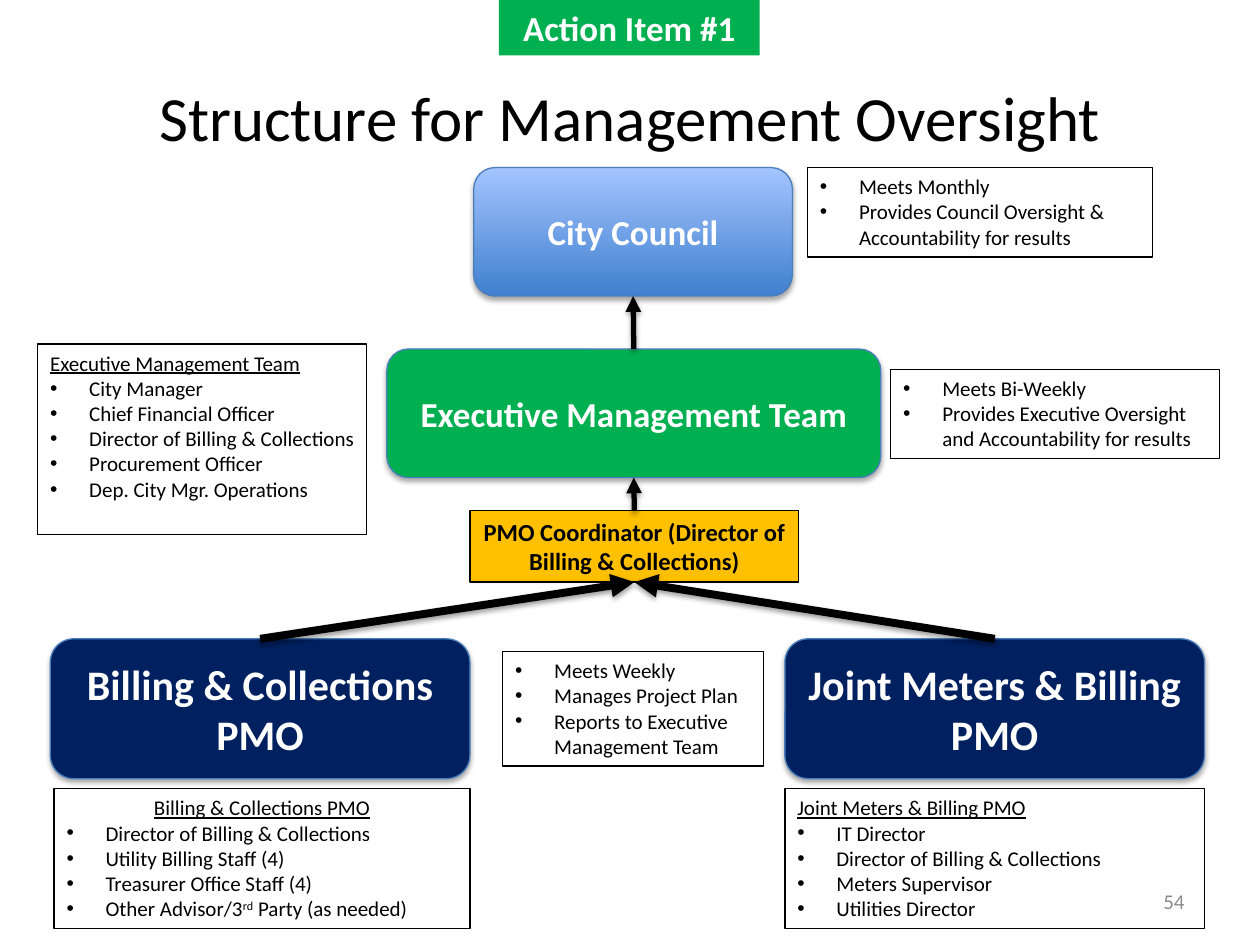
import pptx
import pptx.util
import pptx.dml.color
import pptx.enum.shapes
import pptx.enum.text
import pptx.oxml
import pptx.oxml.ns
from lxml import etree

Inches = pptx.util.Inches
Pt = pptx.util.Pt
SHAPE = pptx.enum.shapes.MSO_SHAPE
ALIGN = pptx.enum.text.PP_ALIGN
ANCHOR = pptx.enum.text.MSO_ANCHOR
qn = pptx.oxml.ns.qn
FONT = "Calibri"
TOP, BOTTOM = 0, 2
GREEN, NAVY, AMBER = "00B050", "002060", "FFC000"


def rgb(value):
    return pptx.dml.color.RGBColor.from_string(value)


def inches(box):
    return [Inches(length) for length in box]


def style(paragraph, size, color="000000", bold=False, align=None):
    paragraph.alignment = align
    for run in paragraph.runs:
        run.font.name = FONT
        run.font.size = Pt(size)
        run.font.bold = bold
        run.font.color.rgb = rgb(color)


def add_shadow(effects, alpha, distance):
    outer = etree.SubElement(
        effects, qn("a:outerShdw"), blurRad=str(Pt(3.1)), dist=str(Pt(distance)),
        dir="5400000", rotWithShape="0")
    black = etree.SubElement(outer, qn("a:srgbClr"), val="000000")
    etree.SubElement(black, qn("a:alpha"), val=str(alpha * 1000))


def add_block(slide, box, text, size, fill, line=None, color="FFFFFF", rounded=False):
    """Filled box with a centred bold label; rounded ones cast a shadow."""
    kind = SHAPE.ROUNDED_RECTANGLE if rounded else SHAPE.RECTANGLE
    block = slide.shapes.add_shape(kind, *inches(box))
    if isinstance(fill, str):
        block.fill.solid()
        block.fill.fore_color.rgb = rgb(fill)
    else:
        block.fill.gradient()
        block.fill.gradient_angle = 90
        for stop, stop_color in zip(block.fill.gradient_stops, fill):
            stop.color.rgb = rgb(stop_color)
    if line:
        block.line.color.rgb = rgb(line)
        block.line.width = Pt(0.75)
    else:
        block.line.fill.background()
    block.shadow.inherit = False
    if rounded:
        add_shadow(block._element.spPr.find(qn("a:effectLst")), 35, 1.8)
    frame = block.text_frame
    frame.word_wrap = True
    frame.vertical_anchor = ANCHOR.MIDDLE
    frame.text = text
    style(frame.paragraphs[0], size, color, True, ALIGN.CENTER)
    return block


def add_role(slide, box, text, size, fill):
    return add_block(slide, box, text, size, fill, line="4B7EBC", rounded=True)


def add_bullet(paragraph):
    properties = paragraph._p.get_or_add_pPr()
    properties.set("marL", str(Inches(0.31)))
    properties.set("indent", str(Inches(-0.31)))
    etree.SubElement(properties, qn("a:buFont"), typeface="Arial")
    etree.SubElement(properties, qn("a:buChar"), char="•")


def add_note(slide, box, items, heading=None, heading_align=None):
    """Outlined list with an optional underlined heading; returns its text frame."""
    note = slide.shapes.add_textbox(*inches(box))
    note.line.color.rgb = rgb("000000")
    note.line.width = Pt(0.75)
    frame = note.text_frame
    frame.word_wrap = True
    frame.text = "\n".join(([heading] if heading else []) + items)
    for index, paragraph in enumerate(frame.paragraphs):
        is_heading = bool(heading) and index == 0
        if not is_heading:
            add_bullet(paragraph)
        style(paragraph, 12, align=heading_align if is_heading else None)
        if is_heading:
            paragraph.runs[0].font.underline = True
    return frame


def add_arrow(slide, lower, upper, width):
    """Arrow from the top of the lower box to the bottom of the upper one."""
    arrow = slide.shapes.add_connector(
        pptx.enum.shapes.MSO_CONNECTOR.STRAIGHT, 0, 0, 0, 0)
    arrow.begin_connect(lower, TOP)
    arrow.end_connect(upper, BOTTOM)
    arrow.line.color.rgb = rgb("000000")
    arrow.line.width = Pt(width)
    etree.SubElement(arrow.line._get_or_add_ln(), qn("a:tailEnd"), type="triangle")
    add_shadow(etree.SubElement(arrow._element.spPr, qn("a:effectLst")), 38, 1.6)


def add_header(slide, left, top, width):
    add_block(slide, (left + 3.46, top, 2.07, 0.44), "Action Item #1", 20, GREEN)
    title = slide.shapes.title
    title.left, title.top, title.width, title.height = inches(
        (left, top + 0.3, width, 1.25))
    title.text_frame.text = "Structure for Management Oversight"
    title.text_frame.vertical_anchor = ANCHOR.MIDDLE
    style(title.text_frame.paragraphs[0], 36, align=ALIGN.CENTER)


def add_council(slide, left, top):
    add_note(slide, (left + 2.65, top, 2.74, 0.71), [
        "Meets Monthly", "Provides Council Oversight & Accountability for results"])
    return add_role(slide, (left, top, 2.53, 1.02), "City Council", 20,
                    ("3F80CE", "A4C4FF"))


def add_executive(slide, left, top):
    add_note(slide, (left, top, 2.61, 1.51), [
        "City Manager", "Chief Financial Officer",
        "Director of Billing & Collections", "Procurement Officer",
        "Dep. City Mgr. Operations"], "Executive Management Team")
    add_note(slide, (left + 6.77, top + 0.2, 2.61, 0.71), [
        "Meets Bi-Weekly",
        "Provides Executive Oversight and Accountability for results"])
    team = add_role(slide, (left + 2.77, top + 0.04, 3.92, 1.02),
                    "Executive Management Team", 20, GREEN)
    coordinator = add_block(
        slide, (left + 3.43, top + 1.32, 2.61, 0.57),
        "PMO Coordinator (Director of Billing & Collections)", 14, AMBER,
        line="000000", color="000000")
    return team, coordinator


def add_pmo(slide, left, top, name, members, inset=0, heading_align=None):
    office = add_role(slide, (left, top, 3.33, 1.11), name, 24, NAVY)
    roster = add_note(slide, (left + inset, top + 1.19, 3.33 - inset, 1.11),
                      members, name, heading_align)
    return office, roster


def add_pmos(slide, left, top):
    billing, roster = add_pmo(
        slide, left, top, "Billing & Collections PMO",
        ["Director of Billing & Collections", "Utility Billing Staff (4)",
         "Treasurer Office Staff (4)", "Other Advisor/3"], 0.03, ALIGN.CENTER)
    # Ordinal with a raised suffix
    advisor = roster.paragraphs[-1]
    for part in ("rd", " Party (as needed)"):
        advisor.add_run().text = part
    style(advisor, 12)
    advisor.runs[1].font._element.set("baseline", "30000")

    add_note(slide, (left + 3.59, top + 0.1, 2.07, 0.91), [
        "Meets Weekly", "Manages Project Plan",
        "Reports to Executive Management Team"])
    meters, _ = add_pmo(
        slide, left + 5.83, top, "Joint Meters & Billing PMO",
        ["IT Director", "Director of Billing & Collections",
         "Meters Supervisor", "Utilities Director"])
    return billing, meters


def add_page_number(slide, box):
    frame = slide.shapes.add_textbox(*inches(box)).text_frame
    frame.word_wrap = True
    frame.vertical_anchor = ANCHOR.MIDDLE
    frame.text = "54"
    style(frame.paragraphs[0], 12, "8C8C8C", align=ALIGN.RIGHT)


def main():
    deck = pptx.Presentation()
    deck.slide_width, deck.slide_height = Inches(10), Inches(7.5)
    slide = deck.slides.add_slide(deck.slide_layouts[5])

    add_header(slide, 0.5, 0, 9)
    add_page_number(slide, (7.17, 6.95, 2.33, 0.4))
    council = add_council(slide, 3.76, 1.33)
    team, coordinator = add_executive(slide, 0.3, 2.73)
    offices = add_pmos(slide, 0.4, 5.07)

    # Reporting lines, bottom to top
    for office in offices:
        add_arrow(slide, office, coordinator, 4.5)
    add_arrow(slide, coordinator, team, 3)
    add_arrow(slide, team, council, 3)

    deck.save("out.pptx")


if __name__ == "__main__":
    main()
